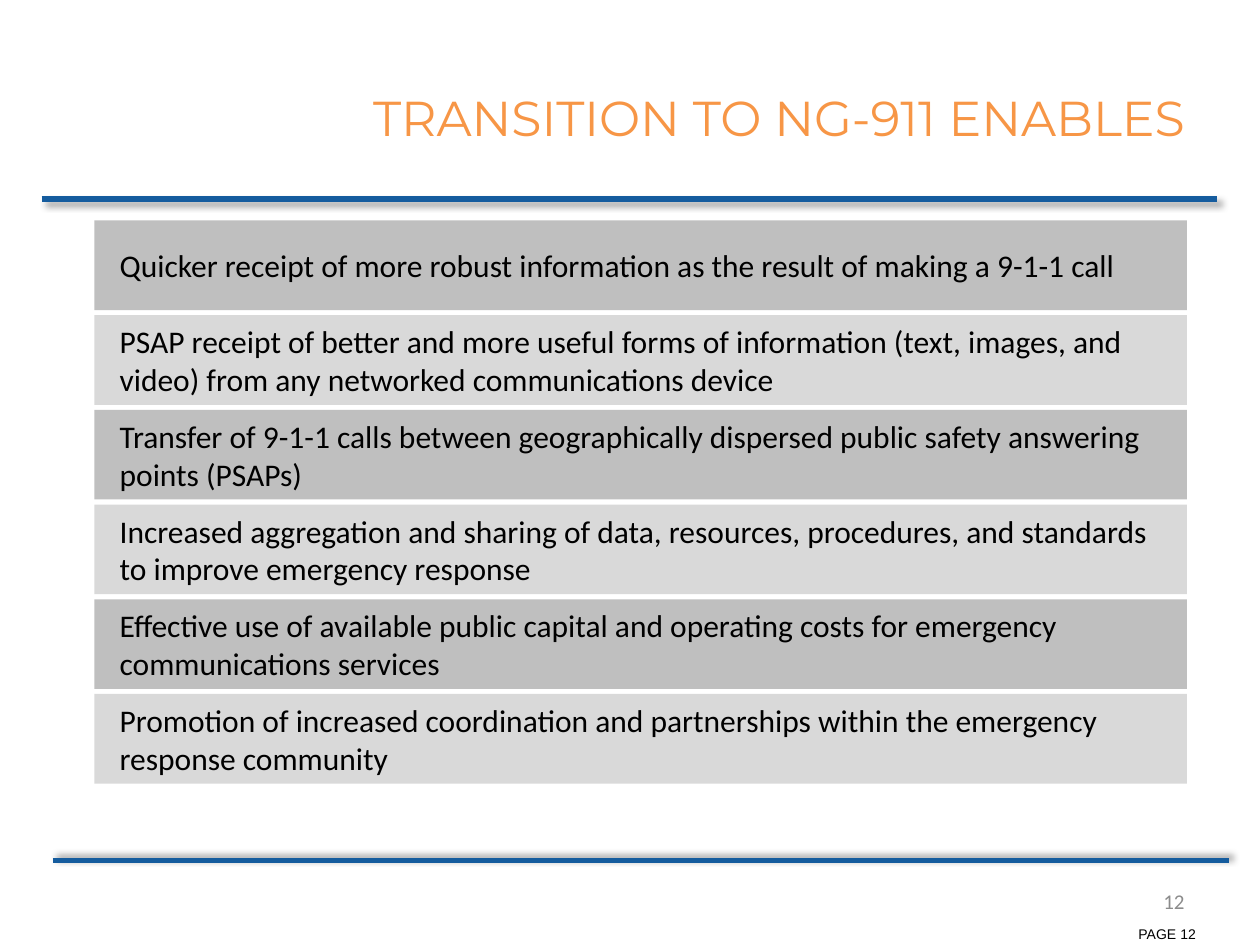
from lxml import etree
from pptx import Presentation
from pptx.dml.color import RGBColor
from pptx.enum import shapes, text
from pptx.oxml import ns
from pptx.util import Inches, Pt

WHITE = RGBColor(0xFF, 0xFF, 0xFF)
BLACK = RGBColor(0x00, 0x00, 0x00)
BLUE = RGBColor(0x15, 0x5C, 0x9E)
ORANGE = RGBColor(0xF7, 0x96, 0x46)
NUMBER_GREY = RGBColor(0x8C, 0x8C, 0x8C)
BAND_COLORS = (RGBColor(0xBF, 0xBF, 0xBF), RGBColor(0xD9, 0xD9, 0xD9))

BENEFITS = (
    "Quicker receipt of more robust information as the result of making a 9-1-1 call",
    "PSAP receipt of better and more useful forms of information "
    "(text, images, and video) from any networked communications device",
    "Transfer of 9-1-1 calls between geographically dispersed "
    "public safety answering points (PSAPs)",
    "Increased aggregation and sharing of data, resources, procedures, "
    "and standards to improve emergency response",
    "Effective use of available public capital and operating costs "
    "for emergency communications services",
    "Promotion of increased coordination and partnerships "
    "within the emergency response community",
)


def write_text(shape, words, font_name, size, color, alignment):
    """Fill a shape with one vertically centred paragraph."""
    frame = shape.text_frame
    frame.word_wrap = True
    frame.vertical_anchor = text.MSO_ANCHOR.MIDDLE
    frame.text = words
    paragraph = frame.paragraphs[0]
    paragraph.alignment = alignment
    font = paragraph.runs[0].font
    font.name = font_name
    font.size = Pt(size)
    font.color.rgb = color


def add_label(slide, box, words, font_name, size, color):
    """Add right-aligned text in the given box."""
    label = slide.shapes.add_textbox(*box)
    write_text(label, words, font_name, size, color, text.PP_ALIGN.RIGHT)


def add_rule(slide, left, top, width, shadow_angle):
    """Add a horizontal blue rule with a soft shadow."""
    rule = slide.shapes.add_connector(
        shapes.MSO_CONNECTOR.STRAIGHT, left, top, left + width, top)
    rule.line.color.rgb = BLUE
    rule.line.width = Pt(3)
    properties = rule._element.spPr
    effects = etree.SubElement(properties, ns.qn("a:effectLst"))
    shadow = etree.SubElement(
        effects, ns.qn("a:outerShdw"), blurRad=str(Pt(4)), dist=str(Pt(3)),
        dir=str(shadow_angle * 60000), algn="tl", rotWithShape="0")
    color = etree.SubElement(shadow, ns.qn("a:srgbClr"), val="000000")
    etree.SubElement(color, ns.qn("a:alpha"), val="40000")


def add_benefits(slide, left, top, width, height):
    """Stack the benefits as equal bands in alternating greys."""
    gap = Inches(0.04)
    band_height = (height - gap * (len(BENEFITS) - 1)) // len(BENEFITS)
    for index, benefit in enumerate(BENEFITS):
        band = slide.shapes.add_shape(
            shapes.MSO_SHAPE.RECTANGLE, left,
            top + index * (band_height + gap), width, band_height)
        band.shadow.inherit = False
        band.fill.solid()
        band.fill.fore_color.rgb = BAND_COLORS[index % 2]
        band.line.fill.background()
        write_text(band, benefit, "Calibri", 18, BLACK, text.PP_ALIGN.LEFT)
        frame = band.text_frame
        frame.margin_left = frame.margin_right = Inches(0.2)
        frame.margin_top = frame.margin_bottom = Inches(0.05)


def add_title(slide, left, top, width, height):
    """Add the slide heading."""
    add_label(slide, (left, top, width, height),
              "TRANSITION TO NG-911 ENABLES", "Montserrat", 28, ORANGE)


def add_footer(slide, left, top, width, height):
    """Add the slide number with the page label below it."""
    number_height = Inches(0.4)
    page_height = Inches(0.17)
    page_width = Inches(0.92)
    add_label(slide, (left, top, width - Inches(0.09), number_height),
              "12", "Calibri", 12, NUMBER_GREY)
    add_label(slide, (left + width - page_width, top + height - page_height,
                      page_width, page_height),
              "PAGE 12", "Arial", 8, BLACK)


def main():
    presentation = Presentation()
    presentation.slide_width = Inches(10)
    presentation.slide_height = Inches(7.5)
    slide = presentation.slides.add_slide(presentation.slide_layouts[6])
    slide.background.fill.solid()
    slide.background.fill.fore_color.rgb = WHITE

    # Rules above and below the content
    add_rule(slide, Inches(0.33), Inches(1.58), Inches(9.33), 45)
    add_rule(slide, Inches(0.42), Inches(6.83), Inches(9.33), 315)

    # Heading, content and footer
    add_title(slide, Inches(2), Inches(0.3), Inches(7.5), Inches(1.25))
    add_benefits(slide, Inches(0.75), Inches(1.75), Inches(8.67), Inches(4.47))
    add_footer(slide, Inches(7.17), Inches(6.95), Inches(2.42), Inches(0.55))

    presentation.save("out.pptx")


if __name__ == "__main__":
    main()
